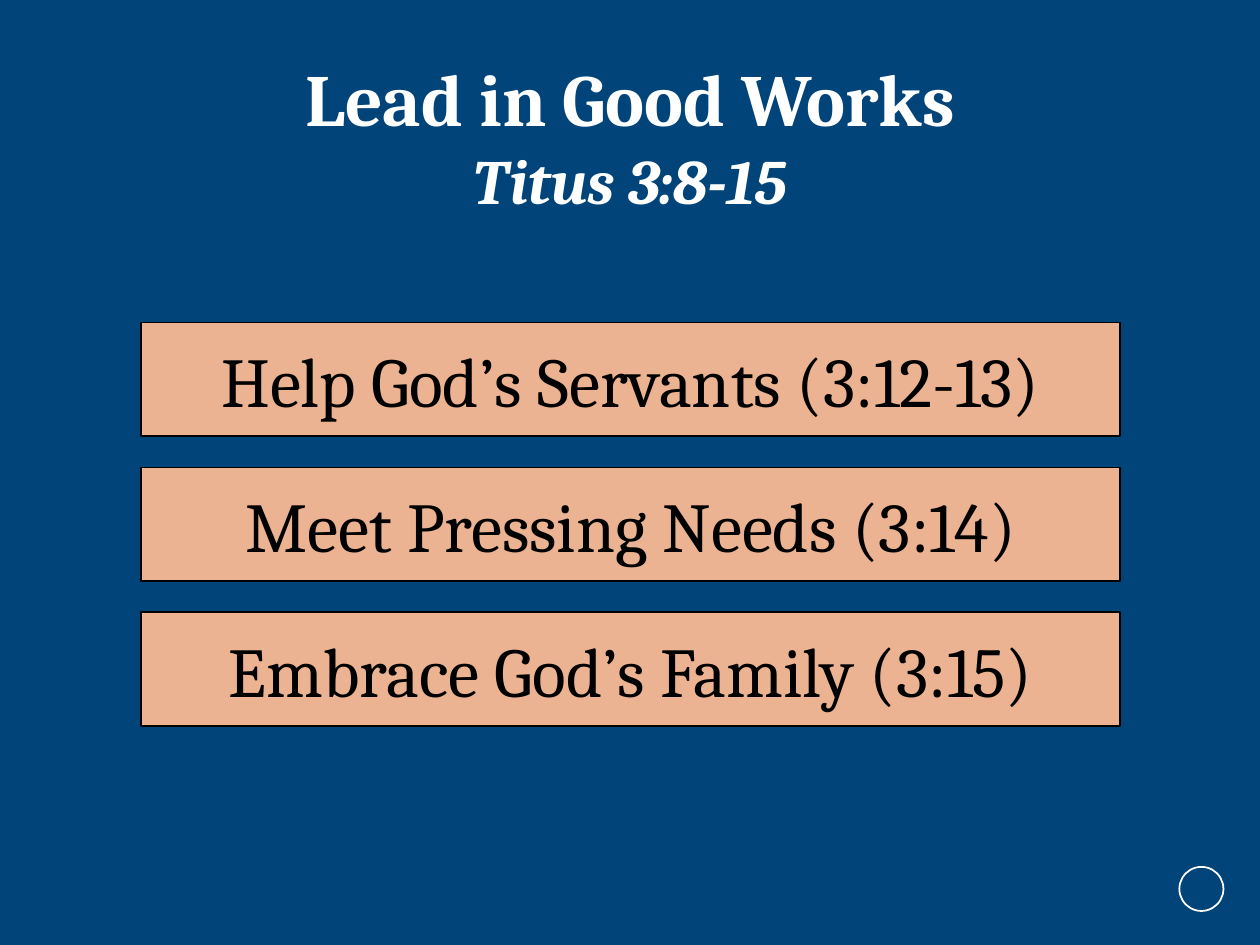
from dataclasses import dataclass

from pptx import Presentation
from pptx.dml.color import RGBColor
from pptx.enum.shapes import MSO_SHAPE
from pptx.enum.text import MSO_ANCHOR, PP_ALIGN
from pptx.util import Inches, Pt


@dataclass(frozen=True)
class Theme:
    font: str = "Cambria"
    background: RGBColor = RGBColor(0x00, 0x44, 0x79)
    light: RGBColor = RGBColor(0xFF, 0xFF, 0xFF)
    dark: RGBColor = RGBColor(0x00, 0x00, 0x00)
    bar: RGBColor = RGBColor(0xEB, 0xB3, 0x91)
    title_size: Pt = Pt(42)
    passage_size: Pt = Pt(36)
    point_size: Pt = Pt(40)
    line_width: Pt = Pt(1)


THEME = Theme()
POINTS = (
    "Help God’s Servants (3:12-13)",
    "Meet Pressing Needs (3:14)",
    "Embrace God’s Family (3:15)",
)
POINT_TOP = 2.56
POINT_PITCH = 1.15


def write_line(p, text, size, color, bold=False, italic=False):
    p.text = text
    p.alignment = PP_ALIGN.CENTER
    p.font.name = THEME.font
    p.font.size = size
    p.font.color.rgb = color
    p.font.bold = bold
    p.font.italic = italic


def add_outlined(s, kind, left, top, width, height, line_color):
    sp = s.shapes.add_shape(
        kind, Inches(left), Inches(top), Inches(width), Inches(height)
    )
    sp.shadow.inherit = False
    sp.fill.background()
    sp.line.color.rgb = line_color
    sp.line.width = THEME.line_width
    return sp


def add_title(s, title, passage):
    box = s.shapes.add_textbox(Inches(0.75), Inches(0.35), Inches(8.5), Inches(1.44))
    tf = box.text_frame
    tf.word_wrap = True
    tf.vertical_anchor = MSO_ANCHOR.MIDDLE
    write_line(tf.paragraphs[0], title, THEME.title_size, THEME.light, bold=True)
    write_line(
        tf.add_paragraph(), passage, THEME.passage_size, THEME.light,
        bold=True, italic=True,
    )


def add_point(s, text, top):
    sp = add_outlined(s, MSO_SHAPE.RECTANGLE, 1.12, top, 7.77, 0.9, THEME.dark)
    sp.fill.solid()
    sp.fill.fore_color.rgb = THEME.bar
    tf = sp.text_frame
    tf.word_wrap = True
    tf.vertical_anchor = MSO_ANCHOR.MIDDLE
    write_line(tf.paragraphs[0], text, THEME.point_size, THEME.dark)


def main():
    prs = Presentation()
    prs.slide_width = Inches(10)
    prs.slide_height = Inches(7.5)
    s = prs.slides.add_slide(prs.slide_layouts[6])
    s.background.fill.solid()
    s.background.fill.fore_color.rgb = THEME.background

    add_outlined(s, MSO_SHAPE.OVAL, 9.36, 6.88, 0.35, 0.35, THEME.light)
    add_title(s, "Lead in Good Works", "Titus 3:8-15")
    for i, text in enumerate(POINTS):
        add_point(s, text, POINT_TOP + i * POINT_PITCH)

    prs.save("out.pptx")


if __name__ == "__main__":
    main()
